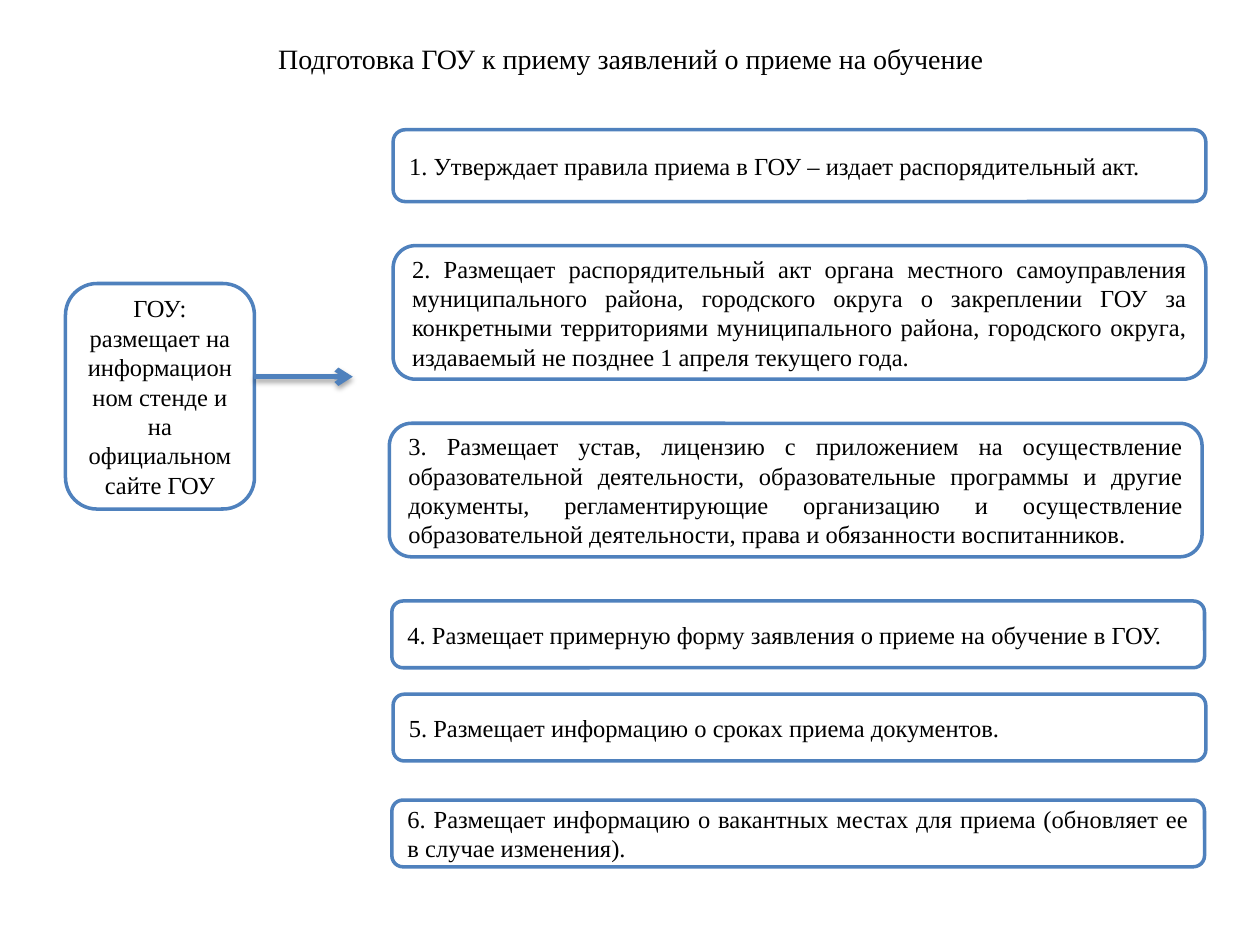
from dataclasses import dataclass

from lxml.etree import SubElement
from pptx import Presentation
from pptx.dml.color import RGBColor
from pptx.enum.shapes import MSO_CONNECTOR, MSO_SHAPE
from pptx.enum.text import MSO_ANCHOR, MSO_AUTO_SIZE, PP_ALIGN
from pptx.oxml import parse_xml
from pptx.oxml.ns import nsdecls, qn
from pptx.util import Inches, Pt


@dataclass(frozen=True)
class Theme:
    font: str = "Times New Roman"
    text: RGBColor = RGBColor(0x00, 0x00, 0x00)
    fill: RGBColor = RGBColor(0xFF, 0xFF, 0xFF)
    accent: RGBColor = RGBColor(0x4F, 0x81, 0xBD)
    title_size: int = 16
    body_size: int = 14
    border: int = 2
    arrow: int = 3


THEME = Theme()
WIDTH, HEIGHT = 10, 7.5

TITLE = "Подготовка ГОУ к приему заявлений о приеме на обучение "
SOURCE = "ГОУ: размещает на информационном стенде и на официальном сайте ГОУ"

# Step text, left, top, height
STEP_WIDTH = 6.45
STEPS = [
    ("1. Утверждает правила приема в ГОУ – издает распорядительный акт.",
     3.12, 1.03, 0.57),
    ("2. Размещает распорядительный акт органа местного самоуправления "
     "муниципального района, городского округа о закреплении ГОУ за "
     "конкретными территориями муниципального района, городского округа, "
     "издаваемый не позднее 1 апреля текущего года.",
     3.12, 1.95, 1.06),
    ("3. Размещает устав, лицензию с приложением на осуществление "
     "образовательной деятельности, образовательные программы и другие "
     "документы, регламентирующие организацию и осуществление "
     "образовательной деятельности, права и обязанности воспитанников.",
     3.09, 3.36, 1.06),
    ("4. Размещает примерную форму заявления о приеме на обучение в ГОУ.",
     3.11, 4.77, 0.53),
    ("5. Размещает информацию о сроках приема документов.",
     3.12, 5.51, 0.53),
    ("6. Размещает информацию о вакантных местах для приема (обновляет ее "
     "в случае изменения).",
     3.11, 6.35, 0.53),
]

SOURCE_BOX = (0.52, 2.25, 1.5, 1.79)
ARROW_Y, ARROW_END = 2.99, 2.8


def write(tf, text, size, align, anchor):
    tf.word_wrap = True
    tf.vertical_anchor = anchor
    p = tf.paragraphs[0]
    p.alignment = align
    r = p.add_run()
    r.text = text
    r.font.name = THEME.font
    r.font.size = Pt(size)
    r.font.color.rgb = THEME.text


def add_title(s):
    title = s.shapes.title
    title.left, title.top = Inches(0.27), Inches(0.28)
    title.width, title.height = Inches(9.53), Inches(0.37)
    write(title.text_frame, TITLE, THEME.title_size, PP_ALIGN.CENTER, MSO_ANCHOR.TOP)
    title.text_frame.auto_size = MSO_AUTO_SIZE.SHAPE_TO_FIT_TEXT


def add_box(s, text, box, align):
    sp = s.shapes.add_shape(MSO_SHAPE.ROUNDED_RECTANGLE, *map(Inches, box))
    sp.shadow.inherit = False
    sp.fill.solid()
    sp.fill.fore_color.rgb = THEME.fill
    sp.line.color.rgb = THEME.accent
    sp.line.width = Pt(THEME.border)
    write(sp.text_frame, text, THEME.body_size, align, MSO_ANCHOR.MIDDLE)


def add_arrow(s, x1, x2, y):
    """Horizontal arrow with a soft shadow falling straight down."""
    arrow = s.shapes.add_connector(
        MSO_CONNECTOR.STRAIGHT, Inches(x1), Inches(y), Inches(x2), Inches(y))
    arrow.line.color.rgb = THEME.accent
    arrow.line.width = Pt(THEME.arrow)
    sp_pr = arrow._element.spPr
    SubElement(sp_pr.find(qn("a:ln")), qn("a:tailEnd"), type="arrow")
    sp_pr.append(parse_xml(
        f'<a:effectLst {nsdecls("a")}>'
        f'<a:outerShdw blurRad="{Pt(3.1)}" dist="{Pt(1.8)}" dir="5400000" rotWithShape="0">'
        '<a:srgbClr val="000000"><a:alpha val="35000"/></a:srgbClr>'
        '</a:outerShdw></a:effectLst>'))


def main():
    prs = Presentation()
    prs.slide_width, prs.slide_height = Inches(WIDTH), Inches(HEIGHT)
    s = prs.slides.add_slide(prs.slide_layouts[5])

    add_title(s)
    add_box(s, SOURCE, SOURCE_BOX, PP_ALIGN.CENTER)
    add_arrow(s, SOURCE_BOX[0] + SOURCE_BOX[2], ARROW_END, ARROW_Y)
    for text, left, top, height in STEPS:
        add_box(s, text, (left, top, STEP_WIDTH, height), PP_ALIGN.JUSTIFY)

    prs.save("out.pptx")


if __name__ == "__main__":
    main()
